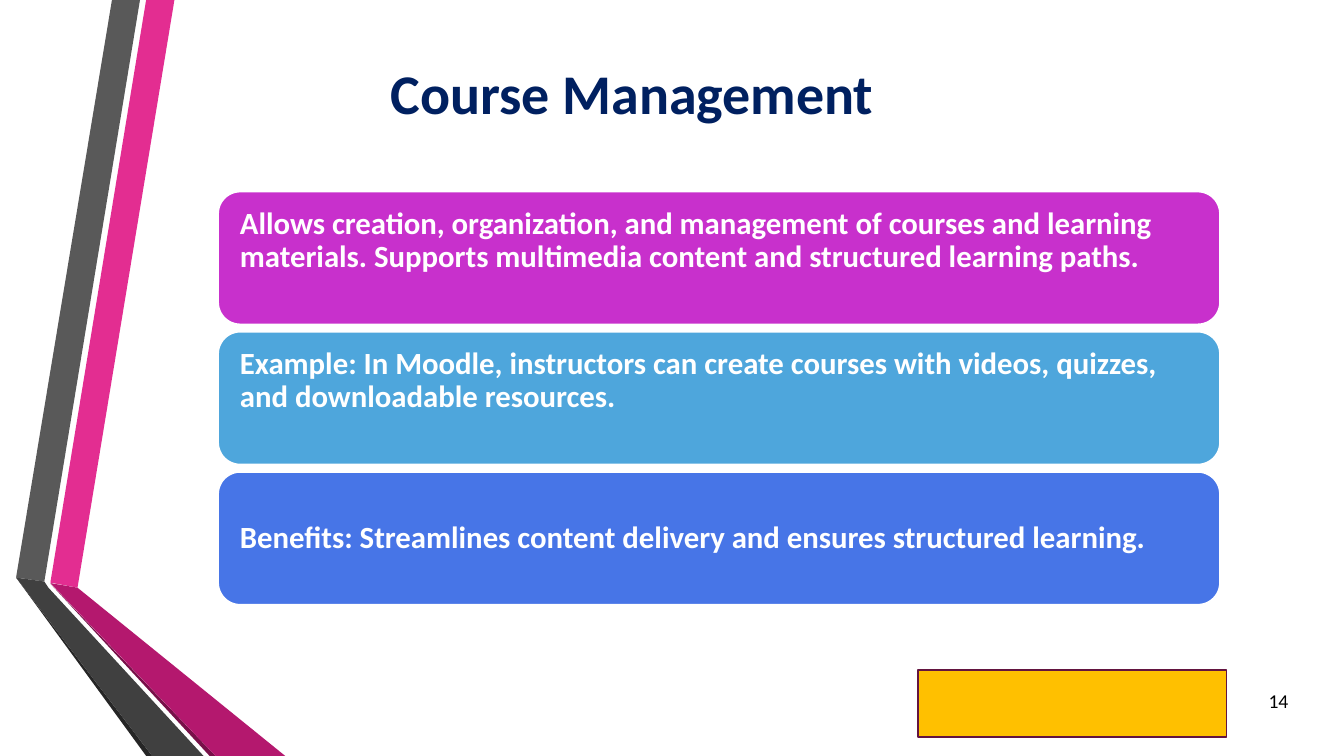
from dataclasses import dataclass

from pptx import Presentation
from pptx.dml.color import RGBColor
from pptx.enum.shapes import MSO_SHAPE
from pptx.enum.text import MSO_ANCHOR, PP_ALIGN
from pptx.util import Pt

RECT, ROUNDED = MSO_SHAPE.RECTANGLE, MSO_SHAPE.ROUNDED_RECTANGLE
MIDDLE = MSO_ANCHOR.MIDDLE
LEFT, CENTER, RIGHT = PP_ALIGN.LEFT, PP_ALIGN.CENTER, PP_ALIGN.RIGHT
TITLE_ONLY = 5


@dataclass(frozen=True)
class Theme:
    font: str = "Calibri"
    title_size: float = 40
    body_size: float = 22
    number_size: float = 14
    line_width: float = 1.25
    navy: str = "002060"
    black: str = "000000"
    white: str = "FFFFFF"
    amber: str = "FFC000"
    plum: str = "631440"
    cards: tuple = ("C830CC", "4EA6DC", "4775E7")
    pinks: tuple = ("E32D91", "781049", "B4186E")
    greys: tuple = ("595959", "262626", "404040")


THEME = Theme()

# Each ribbon: upper band, thin shadow edge, lower band
PINK_RIBBON = (
    [(36, 416.2), (55.4, 419.8), (124.6, 0), (104.4, 0)],
    [(36, 416.9), (149.8, 540), (154.1, 540)],
    [(36, 416.5), (154.1, 540), (203.8, 540), (55.4, 419.8)],
)
GREY_RIBBON = (
    [(100, 0), (80, 0), (11.5, 412.6), (31.7, 415.4)],
    [(11.5, 412.6), (104.4, 540), (108.7, 540)],
    [(145.4, 540), (34.6, 419.8), (31.7, 415.4), (11.5, 412.6), (108.7, 540)],
)

CARD_TEXTS = (
    "Allows creation, organization, and management of courses and learning "
    "materials. Supports multimedia content and structured learning paths.",
    "Example: In Moodle, instructors can create courses with videos, quizzes, "
    "and downloadable resources.",
    "Benefits: Streamlines content delivery and ensures structured learning.",
)


def write(tf, text, size, color, bold=False, align=LEFT, spacing=None):
    tf.word_wrap = True
    tf.vertical_anchor = MIDDLE
    p = tf.paragraphs[0]
    p.alignment = align
    if spacing:
        p.line_spacing = spacing
    r = p.add_run()
    r.text = text
    r.font.name = THEME.font
    r.font.size = Pt(size)
    r.font.bold = bold
    r.font.color.rgb = RGBColor.from_string(color)


def paint(sp, fill, line=None):
    sp.shadow.inherit = False
    sp.fill.solid()
    sp.fill.fore_color.rgb = RGBColor.from_string(fill)
    if line:
        sp.line.color.rgb = RGBColor.from_string(line)
        sp.line.width = Pt(THEME.line_width)
    else:
        sp.line.fill.background()


def add_ribbon(slide, parts, colors):
    for points, color in zip(parts, colors):
        start, *rest = [(Pt(x), Pt(y)) for x, y in points]
        builder = slide.shapes.build_freeform(*start)
        builder.add_line_segments(rest, close=True)
        paint(builder.convert_to_shape(), color)


def add_title(slide, text, x, y, w, h):
    sp = slide.shapes.title
    sp.left, sp.top, sp.width, sp.height = Pt(x), Pt(y), Pt(w), Pt(h)
    write(sp.text_frame, text, THEME.title_size, THEME.navy, bold=True, align=CENTER)


def add_cards(slide, texts, x, y, w, h, gap=5.2):
    card_h = (h - gap * (len(texts) - 1)) / len(texts)
    for i, (text, color) in enumerate(zip(texts, THEME.cards)):
        top = y + i * (card_h + gap)
        sp = slide.shapes.add_shape(ROUNDED, Pt(x), Pt(top), Pt(w), Pt(card_h))
        paint(sp, color, THEME.white)
        tf = sp.text_frame
        tf.margin_left = tf.margin_right = tf.margin_top = Pt(11)
        # All but the last card keep one line free below the text
        last = i == len(texts) - 1
        tf.margin_bottom = Pt(11 if last else 35)
        write(tf, text, THEME.body_size, THEME.white, bold=True, spacing=0.9)


def add_footer(slide, number, x, y, w, h):
    sp = slide.shapes.add_shape(RECT, Pt(x), Pt(y), Pt(220.3), Pt(h))
    paint(sp, THEME.amber, THEME.plum)
    number_w = 43.2
    box = slide.shapes.add_textbox(Pt(x + w - number_w), Pt(y + 7.2), Pt(number_w), Pt(28.8))
    write(box.text_frame, number, THEME.number_size, THEME.black, align=RIGHT)


def main():
    prs = Presentation()
    prs.slide_width, prs.slide_height = Pt(960), Pt(540)
    slide = prs.slides.add_slide(prs.slide_layouts[TITLE_ONLY])

    # Side decoration
    add_ribbon(slide, PINK_RIBBON, THEME.pinks)
    add_ribbon(slide, GREY_RIBBON, THEME.greys)

    # Content
    add_title(slide, "Course Management", 177.8, 15.1, 547.2, 100.8)
    add_cards(slide, CARD_TEXTS, 155.8, 136.8, 715.7, 295.2)

    # Footer bar and page number
    add_footer(slide, "14", 655.9, 478.8, 271.5, 47.5)

    prs.save("out.pptx")


if __name__ == "__main__":
    main()
